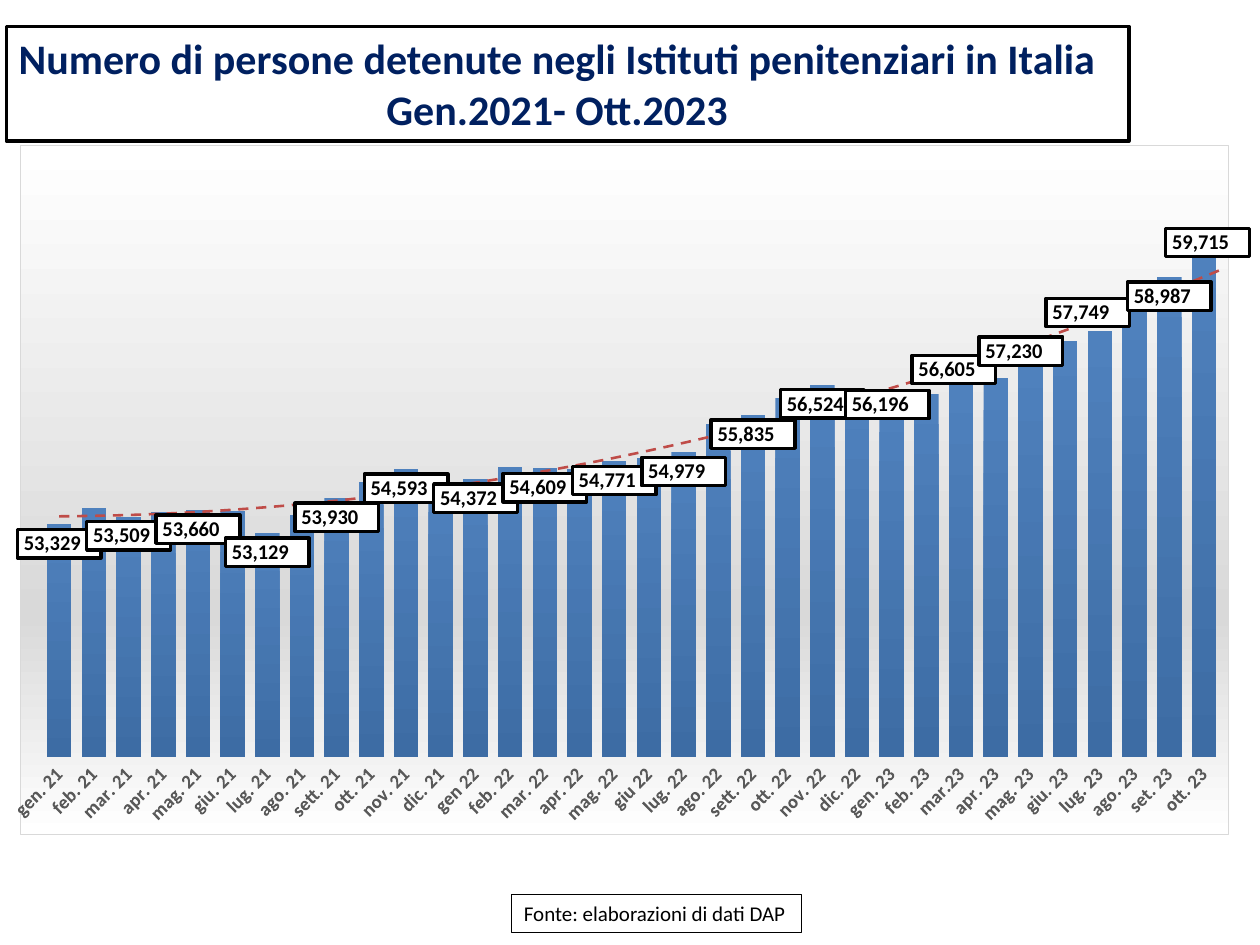
import pptx
import pptx.util
import pptx.oxml
import pptx.oxml.ns
import pptx.chart.data
import pptx.dml.color
import pptx.enum.chart
import pptx.enum.text
from lxml import etree

Inches, Pt = pptx.util.Inches, pptx.util.Pt
qn = pptx.oxml.ns.qn
RGB = pptx.dml.color.RGBColor.from_string
FONT = "Calibri"
COLORS = {"title": "002060", "ink": "000000", "paper": "FFFFFF", "band": "D9D9D9",
          "axis": "595959", "bar": "4F81BD", "base": "3D6CA4", "trend": "BF4C48"}

TITLE = ["Numero di persone detenute negli Istituti penitenziari in Italia",
         "Gen.2021- Ott.2023"]
SOURCE = ["Fonte: elaborazioni di dati DAP"]
MONTHS = [
    "gen. 21", "feb. 21", "mar. 21", "apr. 21", "mag. 21", "giu. 21",
    "lug. 21", "ago. 21", "sett. 21", "ott. 21", "nov. 21", "dic. 21",
    "gen 22", "feb. 22", "mar. 22", "apr. 22", "mag. 22", "giu 22",
    "lug. 22", "ago. 22", "sett. 22", "ott. 22", "nov. 22", "dic. 22",
    "gen. 23", "feb. 23", "mar.23", "apr. 23", "mag. 23", "giu. 23",
    "lug. 23", "ago. 23", "set. 23", "ott. 23"]
COUNTS = [
    53329, 53697, 53509, 53608, 53660, 53637, 53129, 53557, 53930, 54307, 54593, 54134,
    54372, 54635, 54609, 54595, 54771, 54841, 54979, 55637, 55835, 56225, 56524, 56196,
    56127, 56319, 56605, 56674, 57230, 57525, 57749, 58428, 58987, 59715]
FORMAT = r'_-* #,##0\ _€_-;\-* #,##0\ _€_-;_-* "-"?'
# Labels shifted from the bar end, as shares of the chart size
MOVED = {23: (0.025, -0.02), 26: (-0.006, -0.045), 28: (-0.008, -0.032),
         30: (-0.01, -0.055), 33: (0.003, -0.032)}
HIDDEN = [i for i in range(len(MONTHS)) if i not in MOVED and (i % 2 or i == 24)]


def parts(xml):
    """Return the chart elements written in xml."""
    return list(pptx.oxml.parse_xml(
        f'<c:part {pptx.oxml.ns.nsdecls("c", "a")}>{xml}</c:part>'))


def solid(key):
    return f'<a:solidFill><a:srgbClr val="{COLORS[key]}"/></a:solidFill>'


def stroke(key, width, dash="solid"):
    return (f'<a:ln w="{int(Pt(width))}">{solid(key)}'
            f'<a:prstDash val="{dash}"/></a:ln>')


def grade(*stops):
    """Vertical gradient from (percent, colour key) stops."""
    marks = "".join(f'<a:gs pos="{pos * 1000}"><a:srgbClr val="{COLORS[key]}"/></a:gs>'
                    for pos, key in stops)
    return (f'<a:gradFill rotWithShape="1"><a:gsLst>{marks}</a:gsLst>'
            '<a:lin ang="5400000" scaled="0"/></a:gradFill>')


def place(x, y, extra=""):
    return (f'<c:layout><c:manualLayout>{extra}<c:x val="{x}"/><c:y val="{y}"/>'
            '{}</c:manualLayout></c:layout>')


def style(font, size, key, bold=False):
    font.name, font.size, font.bold = FONT, Pt(size), bold
    font.color.rgb = RGB(COLORS[key])


def add_box(slide, area, lines, size, key, width, bold=False):
    box = slide.shapes.add_textbox(*map(Inches, area))
    box.fill.solid()
    box.fill.fore_color.rgb = RGB(COLORS["paper"])
    box.line.color.rgb = RGB(COLORS["ink"])
    box.line.width = Pt(width)
    frame = box.text_frame
    frame.word_wrap = False
    frame.auto_size = pptx.enum.text.MSO_AUTO_SIZE.SHAPE_TO_FIT_TEXT
    frame.text = "\n".join(lines)
    for para in frame.paragraphs:
        style(para.font, size, key, bold)
    for para in frame.paragraphs[1:]:
        para.alignment = pptx.enum.text.PP_ALIGN.CENTER


def label_xml():
    look = (
        f"<c:numFmt formatCode='{FORMAT}' sourceLinked='0'/>"
        f'<c:spPr>{solid("paper")}{stroke("ink", 2)}</c:spPr>'
        f'<c:txPr><a:bodyPr/><a:p><a:pPr><a:defRPr sz="1200" b="1">{solid("ink")}'
        f'<a:latin typeface="{FONT}"/></a:defRPr></a:pPr><a:endParaRPr/></a:p></c:txPr>'
        '<c:dLblPos val="inEnd"/><c:showLegendKey val="0"/><c:showVal val="1"/>'
        '<c:showCatName val="0"/><c:showSerName val="0"/>'
        '<c:showPercent val="0"/><c:showBubbleSize val="0"/>')
    points = {i: '<c:delete val="1"/>' for i in HIDDEN}
    points.update({i: place(*shift).format("") + look for i, shift in MOVED.items()})
    single = "".join(f'<c:dLbl><c:idx val="{i}"/>{points[i]}</c:dLbl>'
                     for i in sorted(points))
    return f"<c:dLbls>{single}{look}</c:dLbls>"


def add_columns(slide):
    data = pptx.chart.data.CategoryChartData(number_format=FORMAT)
    data.categories = MONTHS
    data.add_series("Series 1", COUNTS)
    kinds = pptx.enum.chart
    chart = slide.shapes.add_chart(
        kinds.XL_CHART_TYPE.COLUMN_CLUSTERED,
        *map(Inches, (0.08, 1.15, 9.85, 5.48)), data).chart
    chart.has_legend = chart.has_title = False
    style(chart.font, 11, "ink")

    months, values = chart.category_axis, chart.value_axis
    months.major_tick_mark = kinds.XL_TICK_MARK.NONE
    months.format.line.fill.background()
    style(months.tick_labels.font, 11, "axis", True)
    turn = months.tick_labels.font._element.getroottree().find(
        f'.//{qn("c:catAx")}/{qn("c:txPr")}/{qn("a:bodyPr")}')
    turn.set("rot", "-2700000")
    values.minimum_scale, values.maximum_scale = 48000, 62000
    values.has_major_gridlines = values.visible = False

    plot = chart.plots[0]
    plot.gap_width = 41
    plot.vary_by_categories = False
    bars = plot.series[0]._element
    trend = (f'<c:trendline><c:spPr>{stroke("trend", 1.5, "dash")}</c:spPr>'
             '<c:trendlineType val="poly"/><c:order val="2"/><c:forward val="0.5"/>'
             '<c:dispRSqr val="0"/><c:dispEq val="0"/></c:trendline>')
    bars.find(qn("c:tx")).addnext(
        parts(f'<c:spPr>{grade((0, "bar"), (100, "base"))}</c:spPr>')[0])
    for part in parts(label_xml() + trend):
        bars.find(qn("c:cat")).addprevious(part)

    root = chart._chartSpace
    back = grade((0, "paper"), (68, "band"), (100, "paper"))
    root.find(qn("c:chart")).addnext(
        parts(f'<c:spPr>{back}{stroke("band", 0.75)}</c:spPr>')[0])
    area = root.find(f'.//{qn("c:plotArea")}')
    for old in area.findall(qn("c:layout")):
        area.remove(old)
    inner = ('<c:layoutTarget val="inner"/><c:xMode val="edge"/>'
             '<c:yMode val="edge"/>')
    area.insert(0, parts(place(0.018, 0, inner).format(
        '<c:w val="0.976"/><c:h val="0.888"/>'))[0])


def main():
    deck = pptx.Presentation()
    deck.slide_width, deck.slide_height = Inches(10), Inches(7.5)
    slide = deck.slides.add_slide(deck.slide_layouts[6])
    add_box(slide, (0.05, 0.21, 8.91, 0.91), TITLE, 24, "title", 2, True)
    add_box(slide, (4.06, 7.1, 2.3, 0.3), SOURCE, 12, "ink", 0.75)
    add_columns(slide)
    deck.save("out.pptx")


if __name__ == "__main__":
    main()
